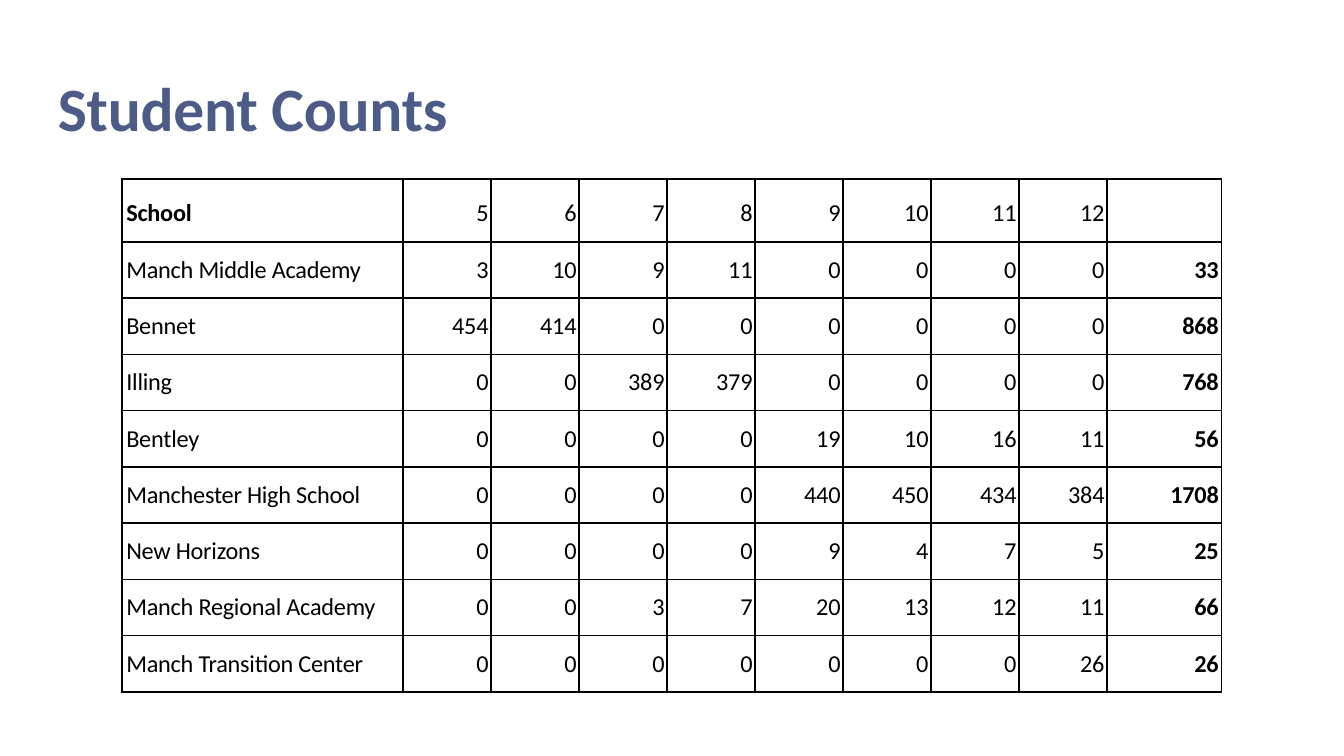
from dataclasses import dataclass

from lxml.etree import SubElement
from pptx import Presentation
from pptx.dml.color import RGBColor
from pptx.enum.text import MSO_ANCHOR, MSO_AUTO_SIZE, PP_ALIGN
from pptx.oxml.ns import qn
from pptx.slide import Slide
from pptx.table import _Cell as Cell
from pptx.text.text import TextFrame
from pptx.util import Inches, Pt

SLIDE_WIDTH = Inches(10)
SLIDE_HEIGHT = SLIDE_WIDTH * 9 // 16
TITLE_BLUE = RGBColor(0x4C, 0x5C, 0x86)
BLACK = RGBColor(0, 0, 0)
FONT = "Calibri"
TIGHT = -10  # letter spacing in hundredths of a point

TABLE_LEFT, TABLE_TOP = Inches(0.91), Inches(1.33)
TABLE_WIDTH, TABLE_HEIGHT = Inches(8.18), Inches(3.82)
SCHOOL_WIDTH, TOTAL_WIDTH = Inches(2.09), Inches(0.85)
HEADER_HEIGHT = Inches(0.47)
GRADES = range(5, 13)


@dataclass(frozen=True)
class School:
    name: str
    counts: tuple[int, ...]

    @property
    def total(self) -> int:
        return sum(self.counts)


SCHOOLS = (
    School("Manch Middle Academy", (3, 10, 9, 11, 0, 0, 0, 0)),
    School("Bennet", (454, 414, 0, 0, 0, 0, 0, 0)),
    School("Illing", (0, 0, 389, 379, 0, 0, 0, 0)),
    School("Bentley", (0, 0, 0, 0, 19, 10, 16, 11)),
    School("Manchester High School", (0, 0, 0, 0, 440, 450, 434, 384)),
    School("New Horizons", (0, 0, 0, 0, 9, 4, 7, 5)),
    School("Manch Regional Academy", (0, 0, 3, 7, 20, 13, 12, 11)),
    School("Manch Transition Center", (0, 0, 0, 0, 0, 0, 0, 26)),
)


def write(frame: TextFrame, text: str, *, size: float, color: RGBColor = BLACK,
          bold: bool = False, align: PP_ALIGN = PP_ALIGN.LEFT) -> None:
    paragraph = frame.paragraphs[0]
    paragraph.alignment = align
    paragraph.font.size = Pt(size)
    if not text:
        return
    run = paragraph.add_run()
    run.text = text
    run.font.name = FONT
    run.font.size = Pt(size)
    run.font.bold = bold
    run.font.color.rgb = color
    if len(text) > 1:
        run.font._element.set("spc", str(TIGHT))


def add_borders(cell: Cell) -> None:
    properties = cell._tc.get_or_add_tcPr()
    for side in ("lnL", "lnR", "lnT", "lnB"):
        line = SubElement(properties, qn(f"a:{side}"), w=str(Pt(1)))
        fill = SubElement(line, qn("a:solidFill"))
        SubElement(fill, qn("a:srgbClr"), val=str(BLACK))


def fill_cell(cell: Cell, text: str, *, top: float, left: float = 0,
              bold: bool = False, align: PP_ALIGN = PP_ALIGN.RIGHT) -> None:
    cell.margin_left, cell.margin_top = Inches(left), Inches(top)
    cell.margin_right, cell.margin_bottom = Inches(0.02), 0
    cell.vertical_anchor = MSO_ANCHOR.TOP
    add_borders(cell)
    cell.fill.background()
    write(cell.text_frame, text, size=13, bold=bold, align=align)


def add_title(slide: Slide, text: str) -> None:
    title = slide.shapes.title
    title.left, title.top = Inches(0.43), Inches(0.5)
    title.width, title.height = Inches(2.95), Inches(0.58)
    frame = title.text_frame
    frame.margin_left = frame.margin_right = frame.margin_bottom = 0
    frame.margin_top = Inches(0.02)
    frame.vertical_anchor = MSO_ANCHOR.TOP
    frame.word_wrap = True
    frame.auto_size = MSO_AUTO_SIZE.SHAPE_TO_FIT_TEXT
    write(frame, text, size=33, color=TITLE_BLUE, bold=True)


def add_counts_table(slide: Slide) -> None:
    header = ("School", *map(str, GRADES), "")
    body = [(s.name, *map(str, s.counts), str(s.total)) for s in SCHOOLS]
    table = slide.shapes.add_table(
        len(body) + 1, len(header), TABLE_LEFT, TABLE_TOP,
        TABLE_WIDTH, TABLE_HEIGHT).table
    table.first_row = table.horz_banding = False

    grade_width = (TABLE_WIDTH - SCHOOL_WIDTH - TOTAL_WIDTH) // len(GRADES)
    widths = (SCHOOL_WIDTH, *[grade_width] * len(GRADES), TOTAL_WIDTH)
    for column, width in zip(table.columns, widths):
        column.width = width
    school_height = (TABLE_HEIGHT - HEADER_HEIGHT) // len(SCHOOLS)
    heights = (HEADER_HEIGHT, *[school_height] * len(SCHOOLS))
    for row, height in zip(table.rows, heights):
        row.height = height

    last = len(header) - 1
    for r, texts in enumerate((header, *body)):
        top = 0.1 if r else 0.15
        for c, text in enumerate(texts):
            if c == 0:
                fill_cell(table.cell(r, c), text, top=top, left=0.03,
                          bold=r == 0, align=PP_ALIGN.LEFT)
            else:
                fill_cell(table.cell(r, c), text, top=top, bold=c == last)


def main() -> None:
    deck = Presentation()
    deck.slide_width, deck.slide_height = SLIDE_WIDTH, SLIDE_HEIGHT
    title_only = deck.slide_layouts[5]
    slide = deck.slides.add_slide(title_only)
    add_title(slide, "Student Counts")
    add_counts_table(slide)
    deck.save("out.pptx")


if __name__ == "__main__":
    main()
